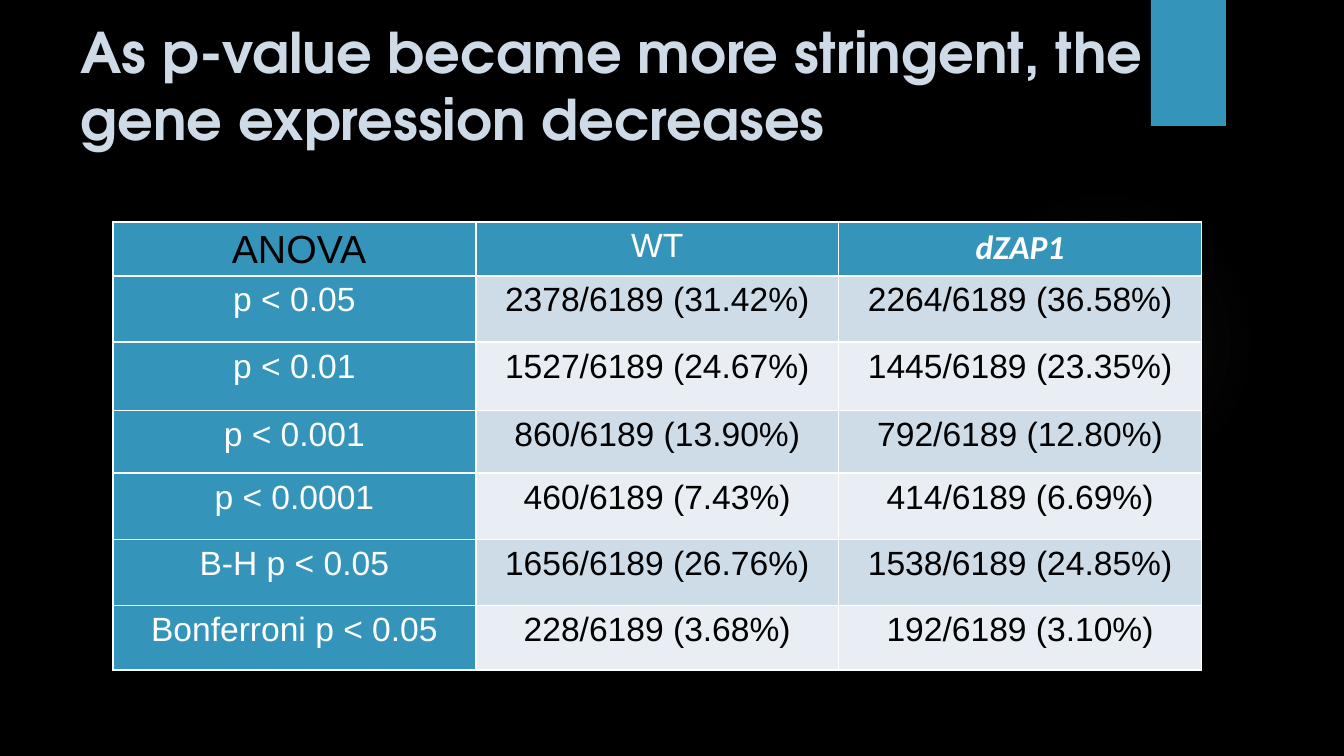
from lxml import etree
from pptx import Presentation
from pptx.dml.color import RGBColor
from pptx.enum import shapes, text
from pptx.oxml import ns
from pptx.util import Pt

TITLE = "As p-value became more stringent, the gene expression decreases"
HEADER = ["ANOVA", "WT", "dZAP1"]
RESULTS = [
    ("p < 0.05", "2378/6189 (31.42%)", "2264/6189 (36.58%)"),
    ("p < 0.01", "1527/6189 (24.67%)", "1445/6189 (23.35%)"),
    ("p < 0.001", "860/6189 (13.90%)", "792/6189 (12.80%)"),
    ("p < 0.0001", "460/6189 (7.43%)", "414/6189 (6.69%)"),
    ("B-H p < 0.05", "1656/6189 (26.76%)", "1538/6189 (24.85%)"),
    ("Bonferroni p < 0.05", "228/6189 (3.68%)", "192/6189 (3.10%)"),
]
ROW_HEIGHTS = [26.3, 35.5, 36.7, 33.5, 35.5, 35.5, 34.5]
COLUMN_WIDTH = 194.4
BLACK, WHITE, BLUE = "000000", "FFFFFF", "3494BA"
BANDS = ["CEDCE7", "E8EEF3"]
GLOW_STOPS = [(0, 7), (36, 6), (69, 0)]


def color(value):
    return RGBColor.from_string(value)


def add_run(paragraph, content, size=18, name="Arial", fill=BLACK, bold=False, italic=False):
    run = paragraph.add_run()
    run.text = content
    font = run.font
    font.size, font.name = Pt(size), name
    font.bold, font.italic = bold, italic
    font.color.rgb = color(fill)


def add_plain_shape(slide, kind, left, top, width, height):
    shape = slide.shapes.add_shape(kind, Pt(left), Pt(top), Pt(width), Pt(height))
    shape.shadow.inherit = False
    shape.line.fill.background()
    return shape


def add_child(parent, tag, **attributes):
    child = etree.SubElement(parent, ns.qn(tag))
    for key, value in attributes.items():
        child.set(key, str(value))
    return child


def set_glow(shape):
    shape.fill.gradient()
    gradient = shape.fill._xPr.find(ns.qn("a:gradFill"))
    for child in list(gradient):
        gradient.remove(child)
    stops = add_child(gradient, "a:gsLst")
    for position, opacity in GLOW_STOPS:
        stop = add_child(stops, "a:gs", pos=position * 1000)
        tint = add_child(stop, "a:srgbClr", val="7F7B9A")
        add_child(tint, "a:alpha", val=opacity * 1000)
    circle = add_child(gradient, "a:path", path="circle")
    add_child(circle, "a:fillToRect", l=50000, t=50000, r=50000, b=50000)


def format_cell(cell, fill):
    properties = cell._tc.get_or_add_tcPr()
    for side in "LRTB":
        line = add_child(properties, f"a:ln{side}", w=Pt(1))
        add_child(add_child(line, "a:solidFill"), "a:srgbClr", val=WHITE)
    cell.fill.solid()
    cell.fill.fore_color.rgb = color(fill)
    cell.margin_left = cell.margin_right = Pt(5)
    cell.margin_top = cell.margin_bottom = 0
    paragraph = cell.text_frame.paragraphs[0]
    paragraph.alignment = text.PP_ALIGN.CENTER
    paragraph.line_spacing = 1.15
    return paragraph


def add_title(slide):
    box = slide.shapes.add_textbox(Pt(36), Pt(20.9), Pt(648), Pt(67.7))
    frame = box.text_frame
    frame.word_wrap = True
    frame.vertical_anchor = text.MSO_ANCHOR.BOTTOM
    frame.margin_left = frame.margin_right = Pt(7.2)
    frame.margin_top = frame.margin_bottom = Pt(7.2)
    add_run(frame.paragraphs[0], TITLE, size=30, name="TeX Gyre Adventor", fill="CEDBE6", bold=True)


def add_results(slide):
    rows = [HEADER, *RESULTS]
    columns = len(HEADER)
    table = slide.shapes.add_table(
        len(rows), columns, Pt(60.5), Pt(118.8),
        Pt(COLUMN_WIDTH * columns), Pt(sum(ROW_HEIGHTS))).table
    table.first_row = table.horz_banding = False
    for column in table.columns:
        column.width = Pt(COLUMN_WIDTH)
    for index, (values, height) in enumerate(zip(rows, ROW_HEIGHTS)):
        table.rows[index].height = Pt(height)
        for position, value in enumerate(values):
            heading = index == 0 or position == 0
            fill = BLUE if heading else BANDS[(index - 1) % 2]
            paragraph = format_cell(table.cell(index, position), fill)
            if value == "ANOVA":
                add_run(paragraph, " ", fill=WHITE)
                add_run(paragraph, value, size=21)
            elif value == "dZAP1":
                add_run(paragraph, value, name="Calibri", fill=WHITE, bold=True, italic=True)
            else:
                add_run(paragraph, value, fill=WHITE if heading else BLACK)


def main():
    presentation = Presentation()
    presentation.slide_width, presentation.slide_height = Pt(720), Pt(405)
    slide = presentation.slides.add_slide(presentation.slide_layouts[6])
    slide.background.fill.solid()
    slide.background.fill.fore_color.rgb = color(BLACK)
    set_glow(add_plain_shape(slide, shapes.MSO_SHAPE.OVAL, 508.3, 99.4, 166.3, 166.3))
    tab = add_plain_shape(slide, shapes.MSO_SHAPE.RECTANGLE, 616.5, 0, 40.3, 67.5)
    tab.fill.solid()
    tab.fill.fore_color.rgb = color(BLUE)
    add_title(slide)
    add_results(slide)
    presentation.save("out.pptx")


if __name__ == "__main__":
    main()
